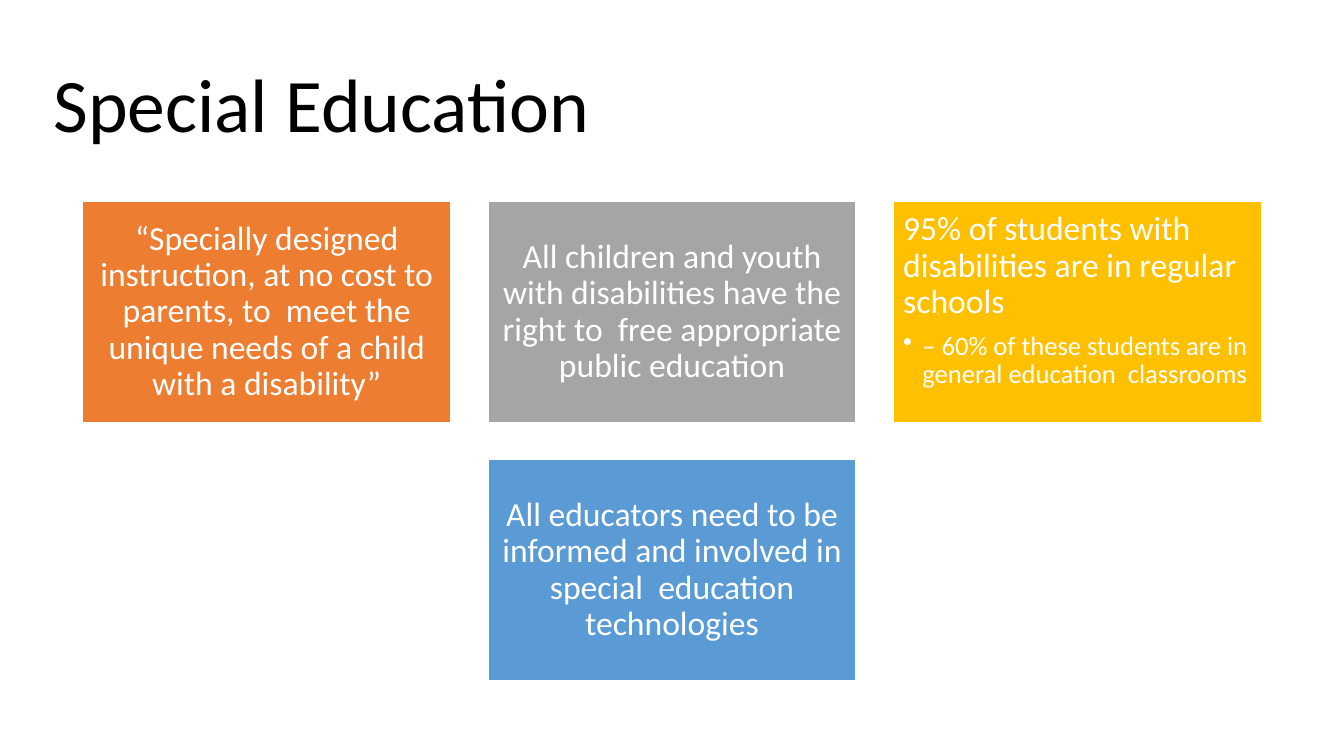
from pptx import Presentation
from pptx.dml.color import RGBColor
from pptx.enum.shapes import MSO_SHAPE
from pptx.enum.text import MSO_ANCHOR, MSO_AUTO_SIZE, PP_ALIGN
from pptx.oxml.ns import qn
from pptx.util import Inches, Pt

WIDE, HIGH, GAP = 3.65, 2.19, 0.37
LEFT, TOP = 0.82, 2

# column, row, fill, text, sub-point
CARDS = [
    (0, 0, "ED7D31", "“Specially designed instruction, at no cost to parents, "
     "to  meet the unique needs of a child with a disability”", None),
    (1, 0, "A5A5A5", "All children and youth with disabilities have the "
     "right to  free appropriate public education", None),
    (2, 0, "FFC000", "95% of students with disabilities are in regular schools",
     "– 60% of these students are in general education  classrooms"),
    (1, 1, "5B9BD5", "All educators need to be informed and involved in "
     "special  education technologies", None),
]


def color(code):
    return RGBColor.from_string(code)


def apply(item, values):
    """Set each named attribute of item to its value."""
    for name, value in values.items():
        setattr(item, name, value)


class Deck:
    font = "Calibri"
    ink = "000000"
    light = "FFFFFF"

    def __init__(self):
        self.file = Presentation()
        apply(self.file, {"slide_width": Inches(13.33),
                          "slide_height": Inches(7.5)})
        self.slide = self.file.slides.add_slide(self.file.slide_layouts[5])

    def label(self, para, text, size, code, align, after=0):
        apply(para, {"text": text, "alignment": align, "line_spacing": 0.9,
                     "space_before": Pt(0), "space_after": Pt(after)})
        apply(para.font, {"name": self.font, "size": Pt(size)})
        para.font.color.rgb = color(code)

    def title(self, text):
        shape = self.slide.shapes.title
        apply(shape, {"left": Inches(0.43), "top": Inches(0.35),
                      "width": Inches(12.48), "height": Inches(1.45)})
        frame = shape.text_frame
        apply(frame, {"vertical_anchor": MSO_ANCHOR.MIDDLE, "word_wrap": True,
                      "auto_size": MSO_AUTO_SIZE.NONE})
        self.label(frame.paragraphs[0], text, 54, self.ink, PP_ALIGN.LEFT)

    def bullet(self, para):
        para.level = 1
        props = para._p.get_or_add_pPr()
        props.set("marL", str(Inches(0.19)))
        props.set("indent", str(Inches(-0.19)))
        mark = props.makeelement(qn("a:buChar"), {"char": "•"})
        props.append(mark)

    def card(self, col, row, fill, text, point):
        box = self.slide.shapes.add_shape(
            MSO_SHAPE.RECTANGLE,
            Inches(LEFT + col * (WIDE + GAP)), Inches(TOP + row * (HIGH + GAP)),
            Inches(WIDE), Inches(HIGH))
        box.shadow.inherit = False
        box.fill.solid()
        box.fill.fore_color.rgb = color(fill)
        box.line.color.rgb = color(self.light)
        box.line.width = Pt(1)
        frame = box.text_frame
        sides = ("left", "top", "right", "bottom")
        apply(frame, {f"margin_{side}": Inches(0.1) for side in sides})
        anchor = MSO_ANCHOR.TOP if point else MSO_ANCHOR.MIDDLE
        apply(frame, {"word_wrap": True, "vertical_anchor": anchor})
        align = PP_ALIGN.LEFT if point else PP_ALIGN.CENTER
        self.label(frame.paragraphs[0], text, 24, self.light, align, 8.4)
        if point:
            para = frame.add_paragraph()
            self.bullet(para)
            self.label(para, point, 19, self.light, PP_ALIGN.LEFT, 2.85)


def main():
    deck = Deck()
    deck.title("Special Education")
    for card in CARDS:
        deck.card(*card)
    deck.file.save("out.pptx")


if __name__ == "__main__":
    main()
